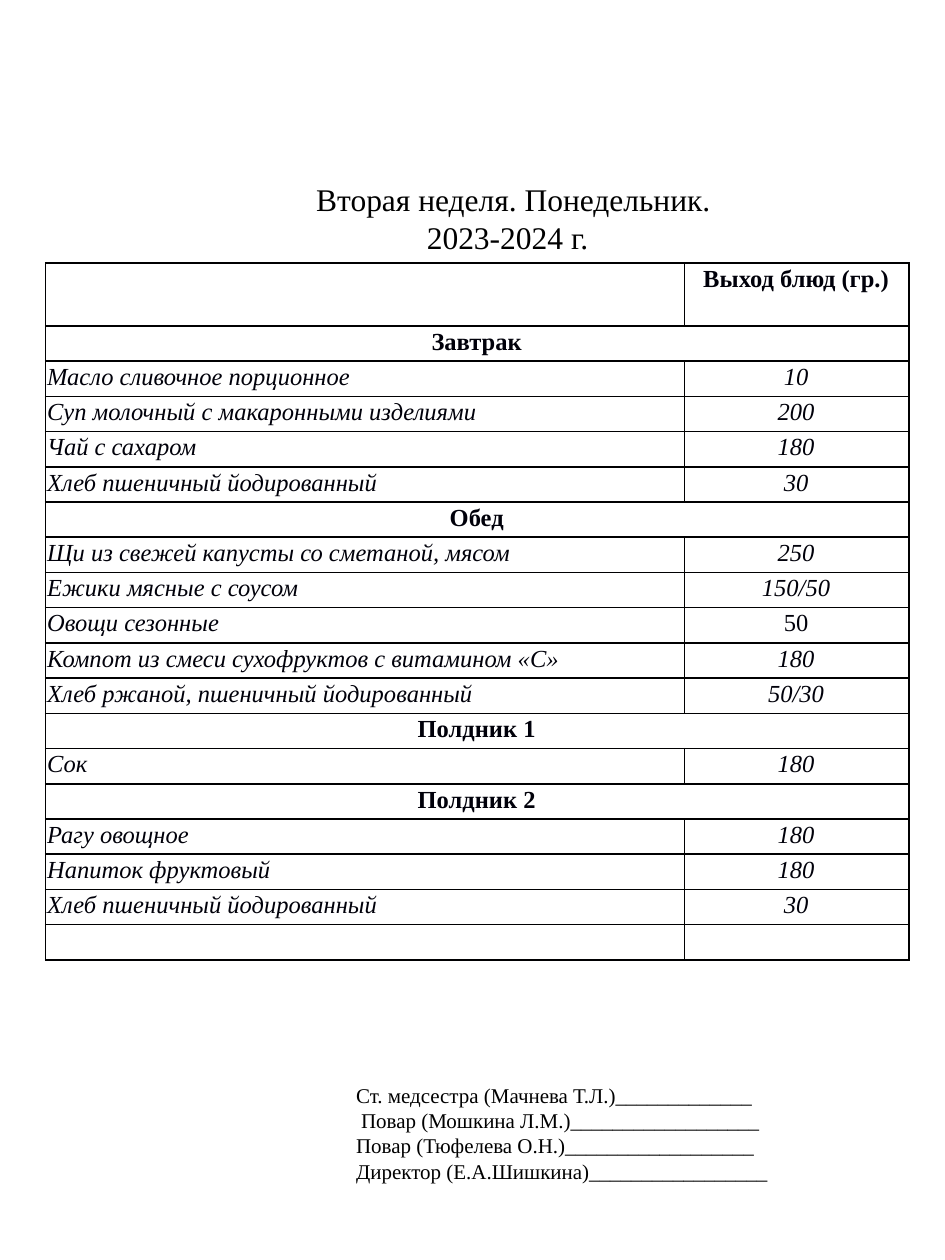
import pptx
import pptx.util
import pptx.dml.color
import pptx.enum.text
import pptx.oxml
import pptx.oxml.ns

Cm = pptx.util.Cm
Pt = pptx.util.Pt
ALIGN = pptx.enum.text.PP_ALIGN
FONT = "Times New Roman"
INK = {"text": "000000", "cell": "00000A", "line": "000001", "back": "FFFFFF"}
MENU = [
    ("Завтрак", [
        ("Масло сливочное порционное", "10"),
        ("Суп молочный с макаронными изделиями", "200"),
        ("Чай с сахаром", "180"),
        ("Хлеб пшеничный йодированный", "30"),
    ]),
    ("Обед", [
        ("Щи из свежей капусты со сметаной, мясом", "250"),
        ("Ежики мясные с соусом", "150/50"),
        ("Овощи сезонные", "50"),
        ("Компот из смеси сухофруктов с витамином «С»", "180"),
        ("Хлеб ржаной, пшеничный йодированный", "50/30"),
    ]),
    ("Полдник 1", [("Сок", "180")]),
    ("Полдник 2", [
        ("Рагу овощное", "180"),
        ("Напиток фруктовый", "180"),
        ("Хлеб пшеничный йодированный", "30"),
    ]),
]
HEAD = [("Вторая неделя. Понедельник.", 0), ("2023-2024 г.", 2.23)]
SIGNS = [
    ("Ст. медсестра (Мачнева Т.Л.)_____________", 0),
    ("Повар (Мошкина Л.М.)__________________", 0.1),
    ("Повар (Тюфелева О.Н.)__________________", 0),
    ("Директор (Е.А.Шишкина)_________________", 0),
]


def tint(name):
    """Return a palette colour."""
    return pptx.dml.color.RGBColor.from_string(INK[name])


def write(para, text, size, ink="text", bold=False, slant=False):
    """Add one formatted run to a paragraph."""
    run = para.add_run()
    run.text = text
    font = run.font
    font.name, font.size, font.bold, font.italic = FONT, Pt(size), bold, slant
    font.color.rgb = tint(ink)


def lines(frame, rows, size):
    """Write left-aligned lines, each with its own indent in centimetres."""
    frame.word_wrap = True
    frame.vertical_anchor = pptx.enum.text.MSO_ANCHOR.TOP
    frame.auto_size = pptx.enum.text.MSO_AUTO_SIZE.SHAPE_TO_FIT_TEXT
    for i, (text, shift) in enumerate(rows):
        para = frame.add_paragraph() if i else frame.paragraphs[0]
        para.alignment = ALIGN.LEFT
        props = para._p.get_or_add_pPr()
        props.set("marL", str(Cm(shift)))
        props.set("indent", "0")
        write(para, text, size)


def title(slide, x, y, w, h):
    """Place the heading."""
    shape = slide.shapes.title
    shape.left, shape.top, shape.width, shape.height = map(Cm, (x, y, w, h))
    lines(shape.text_frame, HEAD, 18)


def style(cell):
    """Set the insets, borders, fill and base text size of a cell."""
    cell.margin_left = Cm(0.03)
    cell.margin_right = cell.margin_top = cell.margin_bottom = Cm(0.05)
    props = cell._tc.get_or_add_tcPr()
    space = pptx.oxml.ns.nsdecls("a")
    for side in "LRTB":
        props.append(pptx.oxml.parse_xml(
            f'<a:ln{side} {space} w="{Pt(1)}"><a:solidFill>'
            f'<a:srgbClr val="{INK["line"]}"/></a:solidFill></a:ln{side}>'))
    cell.fill.solid()
    cell.fill.fore_color.rgb = tint("back")
    cell.text_frame.paragraphs[0]._p.append(
        pptx.oxml.parse_xml(f'<a:endParaRPr {space} sz="1400"/>'))


def fill(cell, text, mid=True, bold=False, slant=False):
    """Write the text of a cell."""
    para = cell.text_frame.paragraphs[0]
    para.alignment = ALIGN.CENTER if mid else ALIGN.LEFT
    write(para, text, 14, "cell", bold, slant)


def menu(slide, x, y, w, h):
    """Place the table of meals, dishes and portions."""
    count = 2 + sum(1 + len(foods) for _, foods in MENU)
    top = 1.27
    grid = slide.shapes.add_table(count, 2, *map(Cm, (x, y, w, h))).table
    grid.first_row = grid.horz_banding = False
    grid.columns[0].width = Cm(w * 0.74)
    grid.columns[1].width = Cm(w * 0.26)
    for i, row in enumerate(grid.rows):
        row.height = Cm((h - top) / (count - 1) if i else top)
        for cell in row.cells:
            style(cell)
    fill(grid.cell(0, 1), "Выход блюд (гр.)", bold=True)
    at = 1
    for meal, foods in MENU:
        grid.cell(at, 0).merge(grid.cell(at, 1))
        fill(grid.cell(at, 0), meal, bold=True)
        for at, (food, grams) in enumerate(foods, at + 1):
            fill(grid.cell(at, 0), food, mid=False, slant=True)
            fill(grid.cell(at, 1), grams, slant=food != "Овощи сезонные")
        at += 1


def signs(slide, x, y, w, h):
    """Place the signature lines."""
    box = slide.shapes.add_textbox(*map(Cm, (x, y, w, h)))
    lines(box.text_frame, SIGNS, 12)


def main():
    """Build and save the slide."""
    deck = pptx.Presentation()
    deck.slide_width, deck.slide_height = Cm(19.05), Cm(25.4)
    slide = deck.slides.add_slide(deck.slide_layouts[5])
    title(slide, 6.12, 3.5, 10.8, 1.8)
    menu(slide, 0.92, 5.3, 17.4, 14.05)
    signs(slide, 6.93, 21.7, 10, 3.07)
    deck.save("out.pptx")


if __name__ == "__main__":
    main()
